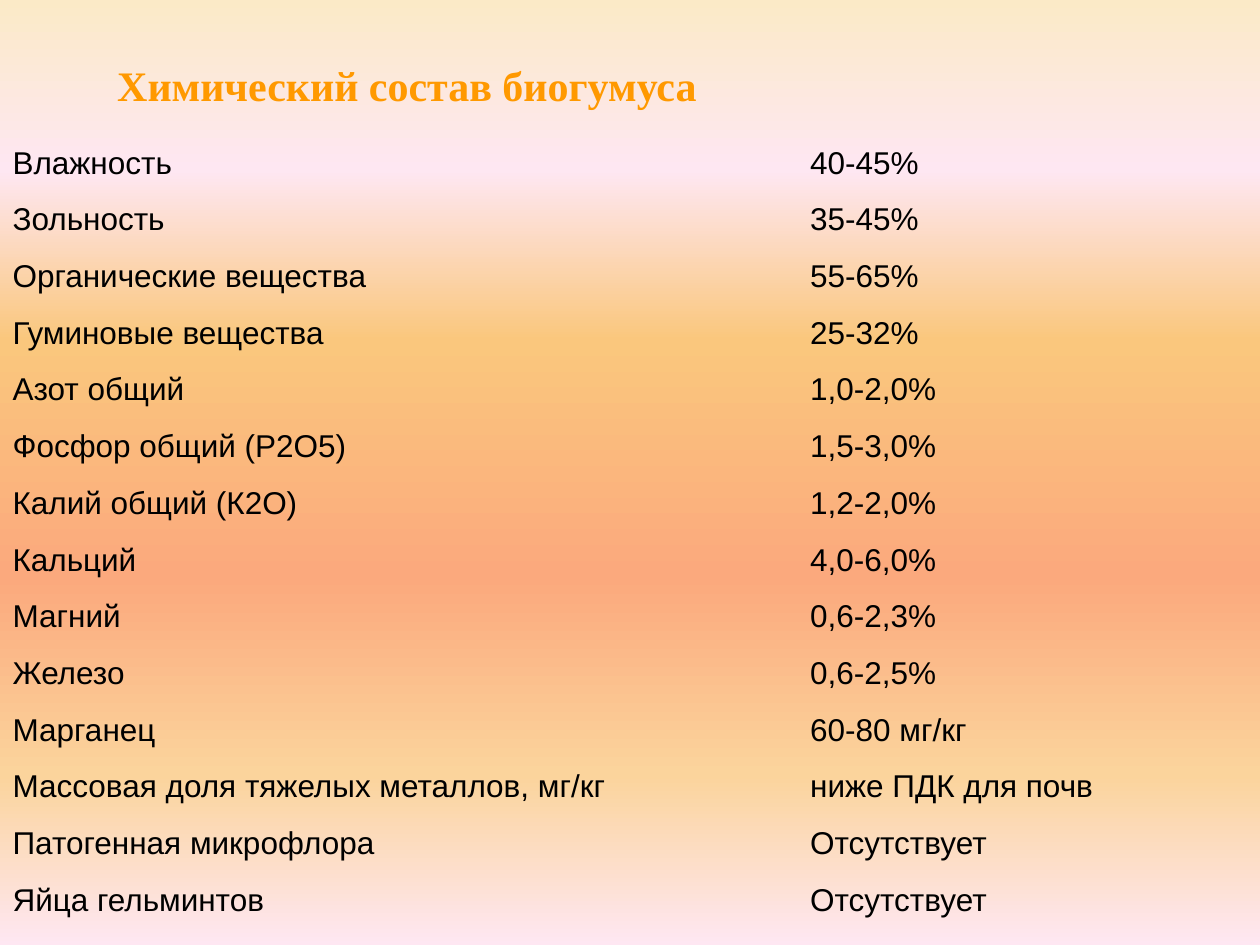
import lxml.etree
import pptx
import pptx.dml.color
import pptx.enum.text
import pptx.oxml.ns
import pptx.util

Inches = pptx.util.Inches
qn = pptx.oxml.ns.qn

TITLE = "Химический состав биогумуса"
COMPOSITION = [
    ("Влажность", "40-45%"),
    ("Зольность", "35-45%"),
    ("Органические вещества", "55-65%"),
    ("Гуминовые вещества", "25-32%"),
    ("Азот общий", "1,0-2,0%"),
    ("Фосфор общий (Р2О5)", "1,5-3,0%"),
    ("Калий общий (К2О)", "1,2-2,0%"),
    ("Кальций", "4,0-6,0%"),
    ("Магний", "0,6-2,3%"),
    ("Железо", "0,6-2,5%"),
    ("Марганец", "60-80 мг/кг"),
    ("Массовая доля тяжелых металлов, мг/кг", "ниже ПДК для почв"),
    ("Патогенная микрофлора", "Отсутствует"),
    ("Яйца гельминтов", "Отсутствует"),
]
COLORS = {
    "title": "FF9900", "text": "000000",
    "cream": "FBEAC7", "pink": "FEE7F2", "amber": "FAC77D",
    "coral": "FBA97D", "sand": "FBD49C",
}
BACKGROUND_STOPS = [
    (0, "cream"), (18, "pink"), (36, "amber"),
    (61, "coral"), (82, "sand"), (100, "pink"),
]
COLUMN_WIDTHS = (6.33, 3.39)
ROW_HEIGHT = 0.45
NO_STYLE_NO_GRID = "{2D5ABB26-0587-4C30-8999-92F81FD0307C}"


def write_text(frame, text, size=18, font="Arial", color="text", bold=False):
    para = frame.paragraphs[0]
    para.alignment = pptx.enum.text.PP_ALIGN.LEFT
    span = para.add_run()
    span.text = text
    span.font.size = pptx.util.Pt(size)
    span.font.name = font
    span.font.bold = bold
    span.font.color.rgb = pptx.dml.color.RGBColor.from_string(COLORS[color])


def paint_background(page):
    fill = page.background.fill
    fill.gradient()
    fill.gradient_angle = 270  # counter-clockwise: first stop at the top
    stop_list = next(page.element.iter(qn("a:gsLst")))
    for stop in list(stop_list):
        stop_list.remove(stop)
    for percent, color in BACKGROUND_STOPS:
        stop = lxml.etree.SubElement(stop_list, qn("a:gs"), pos=str(percent * 1000))
        lxml.etree.SubElement(stop, qn("a:srgbClr"), val=COLORS[color])


def add_title(page):
    title = page.shapes.title
    title.left, title.top = Inches(0.83), Inches(0.42)
    title.width, title.height = Inches(6.46), Inches(0.9)
    frame = title.text_frame
    frame.word_wrap = True
    frame.auto_size = pptx.enum.text.MSO_AUTO_SIZE.NONE
    frame.vertical_anchor = pptx.enum.text.MSO_ANCHOR.TOP
    write_text(frame, TITLE, size=24, font="Times New Roman", color="title", bold=True)


def add_composition_table(page):
    graphic = page.shapes.add_table(
        len(COMPOSITION), len(COLUMN_WIDTHS), Inches(0), Inches(1.07),
        Inches(sum(COLUMN_WIDTHS)), Inches(ROW_HEIGHT * len(COMPOSITION)))
    table = graphic.table
    table.first_row = table.horz_banding = False
    next(graphic.element.iter(qn("a:tableStyleId"))).text = NO_STYLE_NO_GRID
    for column, width in zip(table.columns, COLUMN_WIDTHS):
        column.width = Inches(width)
    for row, texts in zip(table.rows, COMPOSITION):
        row.height = Inches(ROW_HEIGHT)
        for cell, text in zip(row.cells, texts):
            cell.fill.background()
            cell.vertical_anchor = pptx.enum.text.MSO_ANCHOR.MIDDLE
            write_text(cell.text_frame, text)


def main():
    deck = pptx.Presentation()
    deck.slide_width, deck.slide_height = Inches(10), Inches(7.5)
    page = deck.slides.add_slide(deck.slide_layouts.get_by_name("Title Only"))
    paint_background(page)
    add_title(page)
    add_composition_table(page)
    deck.save("out.pptx")


if __name__ == "__main__":
    main()
